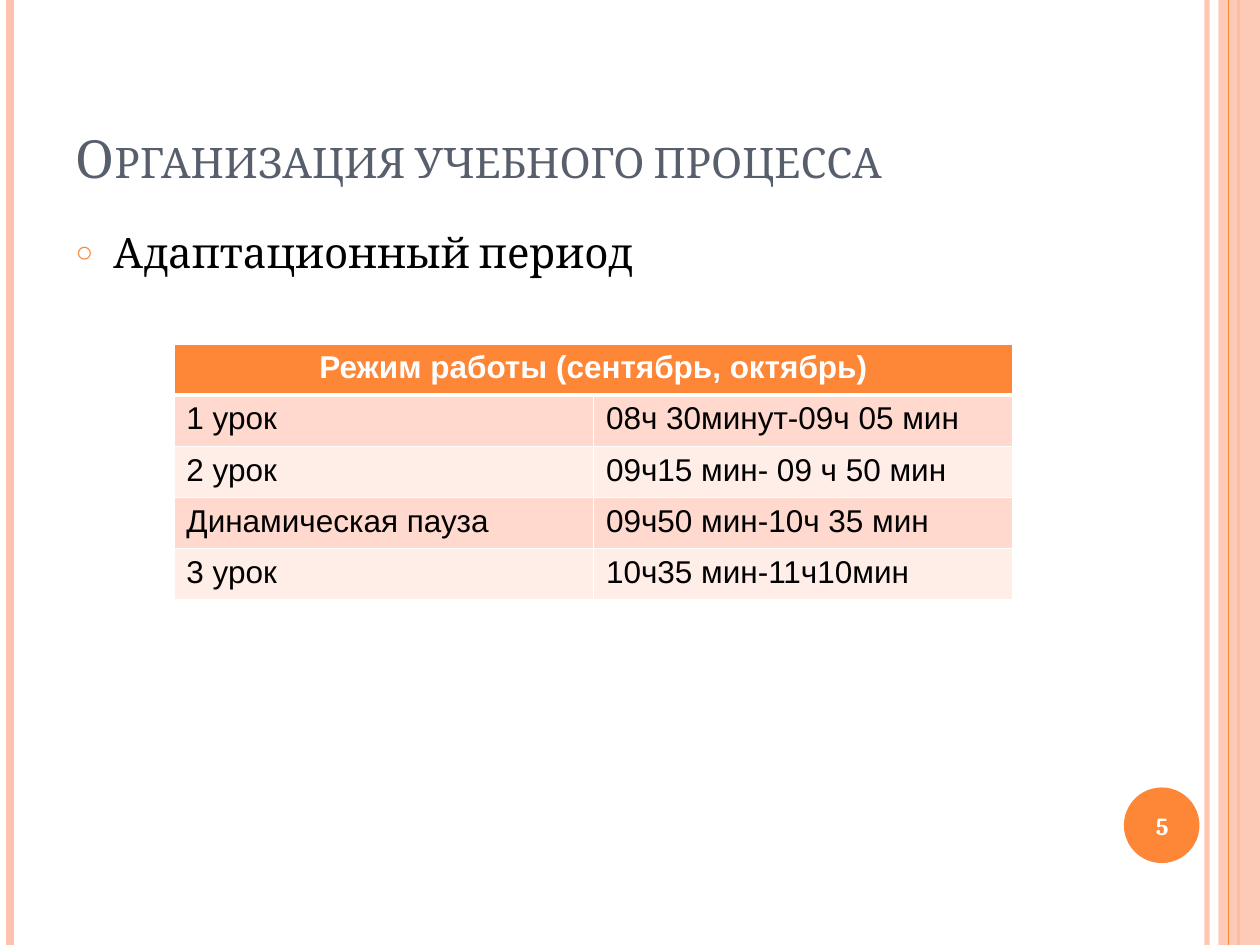
from typing import NamedTuple

from lxml.etree import SubElement
from pptx import Presentation
from pptx.dml.color import RGBColor
from pptx.enum.shapes import MSO_CONNECTOR as Connector, MSO_SHAPE as Preset
from pptx.enum.text import MSO_ANCHOR as Anchor, PP_ALIGN as Align
from pptx.oxml.ns import qn
from pptx.util import Inches, Pt

ORANGE = RGBColor(0xFE, 0x86, 0x37)
PEACH = RGBColor(0xFE, 0xC3, 0xAE)
SLATE = RGBColor(0x57, 0x5F, 0x6D)
BLACK = RGBColor(0x00, 0x00, 0x00)
WHITE = RGBColor(0xFF, 0xFF, 0xFF)
BANDS = (RGBColor(0xFF, 0xD9, 0xCE), RGBColor(0xFF, 0xED, 0xE8))

SLIDE_HEIGHT = 7.5
TABLE_HEADING = "Режим работы (сентябрь, октябрь)"


class Stripe(NamedTuple):
    x: float
    width: float
    color: RGBColor
    opacity: int = 100


class Lesson(NamedTuple):
    name: str
    time: str


STRIPES_BEHIND = (
    Stripe(9.58, 3, PEACH, 93),
    Stripe(0.08, 4.5, PEACH),
    Stripe(9.83, 1.5, ORANGE),
)
STRIPE_IN_FRONT = Stripe(9.75, 0.75, ORANGE)

LESSONS = (
    Lesson("1 урок", "08ч 30минут-09ч 05 мин"),
    Lesson("2 урок", "09ч15 мин- 09 ч 50 мин"),
    Lesson("Динамическая пауза", "09ч50 мин-10ч 35 мин"),
    Lesson("3 урок", "10ч35 мин-11ч10мин"),
)


def set_opacity(properties, percent: int) -> None:
    color = next(properties.iter(qn("a:srgbClr")))
    SubElement(color, qn("a:alpha"), val=str(percent * 1000))


def place(shape, left: float, top: float, width: float, height: float) -> None:
    shape.left, shape.top = Inches(left), Inches(top)
    shape.width, shape.height = Inches(width), Inches(height)


def add_run(paragraph, text: str, font: str, size: float, color: RGBColor, bold: bool = False):
    run = paragraph.add_run()
    run.text = text
    run.font.name = font
    run.font.size = Pt(size)
    run.font.bold = bold
    run.font.color.rgb = color
    return run


def add_stripe(slide, stripe: Stripe) -> None:
    x = Inches(stripe.x)
    line = slide.shapes.add_connector(Connector.STRAIGHT, x, 0, x, Inches(SLIDE_HEIGHT))
    line.line.width = Pt(stripe.width)
    line.line.color.rgb = stripe.color
    properties = line._element.spPr
    SubElement(properties, qn("a:effectLst"))
    if stripe.opacity < 100:
        set_opacity(properties, stripe.opacity)


def add_filled_shape(slide, preset: Preset, box: tuple, color: RGBColor):
    shape = slide.shapes.add_shape(preset, *map(Inches, box))
    shape.shadow.inherit = False
    shape.fill.solid()
    shape.fill.fore_color.rgb = color
    shape.line.fill.background()
    return shape


def add_decoration(slide) -> None:
    for stripe in STRIPES_BEHIND:
        add_stripe(slide, stripe)
    band = add_filled_shape(slide, Preset.RECTANGLE, (9.67, 0, 0.33, SLIDE_HEIGHT), PEACH)
    set_opacity(band._element.spPr, 87)
    add_stripe(slide, STRIPE_IN_FRONT)
    add_filled_shape(slide, Preset.OVAL, (8.92, 6.25, 0.6, 0.6), ORANGE)


def fill_title(title) -> None:
    place(title, 0.5, 0.3, 8.17, 1.25)
    title.text_frame.vertical_anchor = Anchor.BOTTOM
    paragraph = title.text_frame.paragraphs[0]
    paragraph.alignment = Align.LEFT
    run = add_run(paragraph, "Организация учебного процесса", "Cambria", 30, SLATE)
    run.font._element.set("cap", "small")


def fill_body(body) -> None:
    place(body, 0.5, 1.75, 8.17, 5.33)
    paragraph = body.text_frame.paragraphs[0]
    paragraph.space_before = Pt(6)
    add_run(paragraph, "Адаптационный период", "Cambria", 24, BLACK)
    properties = paragraph._p.get_or_add_pPr()
    properties.set("marL", str(Inches(0.3)))
    properties.set("indent", str(Inches(-0.3)))
    bullet_color = SubElement(properties, qn("a:buClr"))
    SubElement(bullet_color, qn("a:srgbClr"), val=str(ORANGE))
    SubElement(properties, qn("a:buSzPct"), val="70000")
    SubElement(properties, qn("a:buChar"), char="○")


def add_page_number(slide) -> None:
    box = slide.shapes.add_textbox(*map(Inches, (8.89, 6.27, 0.67, 0.57)))
    frame = box.text_frame
    frame.word_wrap = True
    frame.vertical_anchor = Anchor.MIDDLE
    paragraph = frame.paragraphs[0]
    paragraph.alignment = Align.CENTER
    add_run(paragraph, "5", "Cambria", 14, WHITE, bold=True)


def format_cell(cell, color: RGBColor, top: float = 1, bottom: float = 1) -> None:
    """Give the cell white borders, widths in points, and a solid fill."""
    properties = cell._tc.get_or_add_tcPr()
    for side, width in (("L", 1), ("R", 1), ("T", top), ("B", bottom)):
        border = SubElement(properties, qn(f"a:ln{side}"), w=str(Pt(width)))
        fill = SubElement(border, qn("a:solidFill"))
        SubElement(fill, qn("a:srgbClr"), val=str(WHITE))
    cell.fill.solid()
    cell.fill.fore_color.rgb = color


def add_timetable(slide) -> None:
    row_count = len(LESSONS) + 1
    frame = slide.shapes.add_table(row_count, 2, *map(Inches, (1.38, 2.73, 6.66, 2.03)))
    table = frame.table

    for column in range(2):
        format_cell(table.cell(0, column), ORANGE, bottom=3)
    heading = table.cell(0, 0)
    heading.merge(table.cell(0, 1))
    paragraph = heading.text_frame.paragraphs[0]
    paragraph.alignment = Align.CENTER
    add_run(paragraph, TABLE_HEADING, "Arial", 18, WHITE, bold=True)

    for row, lesson in enumerate(LESSONS, start=1):
        for column, text in enumerate(lesson):
            cell = table.cell(row, column)
            format_cell(cell, BANDS[(row - 1) % 2], top=3 if row == 1 else 1)
            add_run(cell.text_frame.paragraphs[0], text, "Arial", 18, BLACK)


def main() -> None:
    presentation = Presentation()
    presentation.slide_width = Inches(10)
    presentation.slide_height = Inches(SLIDE_HEIGHT)
    slide = presentation.slides.add_slide(presentation.slide_layouts[1])
    add_decoration(slide)
    fill_title(slide.shapes.title)
    fill_body(slide.placeholders[1])
    add_page_number(slide)
    add_timetable(slide)
    presentation.save("out.pptx")


if __name__ == "__main__":
    main()
